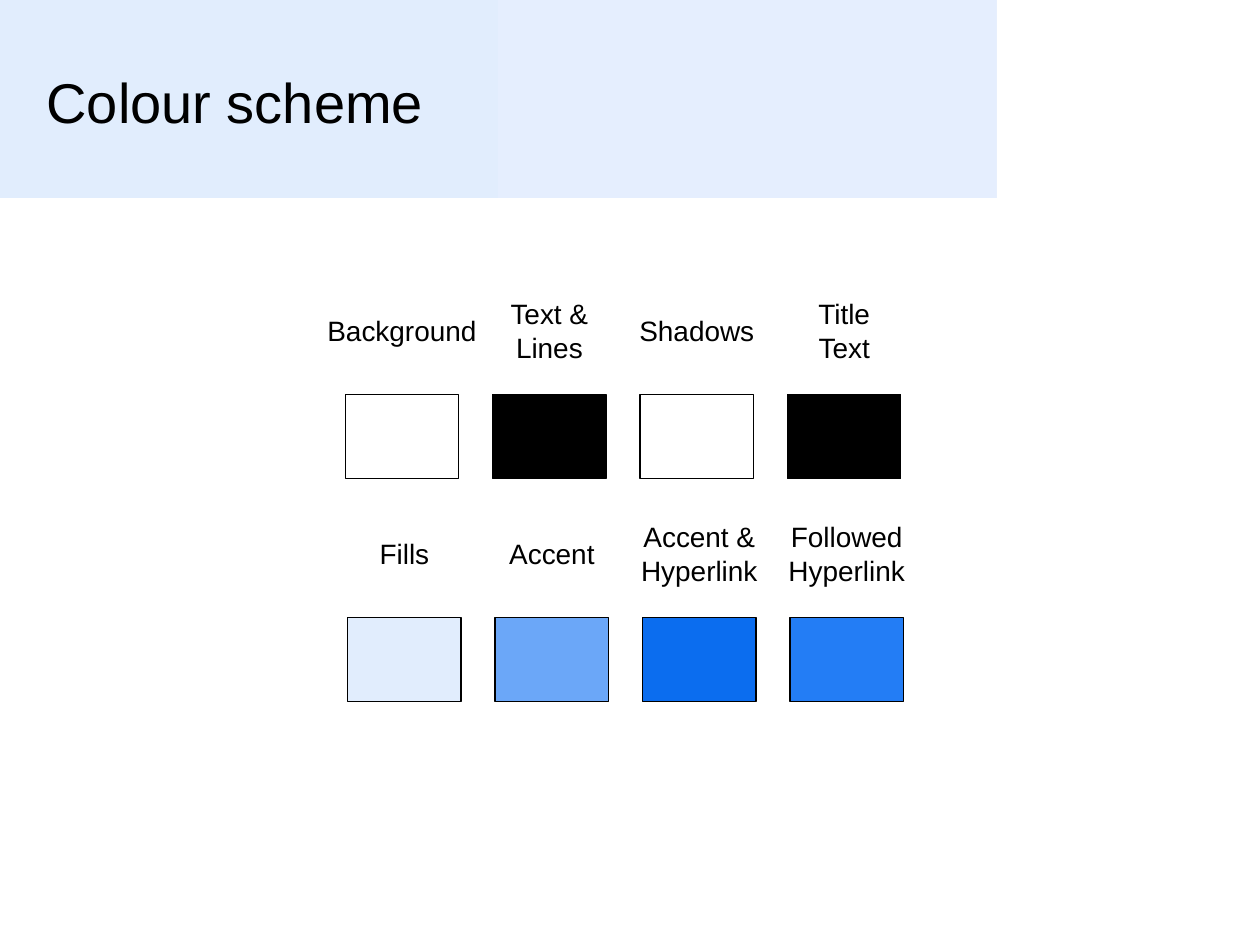
from dataclasses import dataclass

from pptx import Presentation
from pptx.dml.color import RGBColor
from pptx.enum.shapes import MSO_SHAPE
from pptx.enum.text import MSO_ANCHOR, PP_ALIGN
from pptx.util import Inches, Pt


@dataclass(frozen=True)
class Theme:
    font: str = "Arial"
    text: str = "000000"
    background: str = "FFFFFF"
    fills: str = "E1EDFD"
    band_end: str = "E5EEFE"
    accent: str = "6BA7F8"
    strong_accent: str = "0B6DEF"
    followed: str = "237DF5"
    title_size: int = 32
    label_size: int = 16
    line_width: float = 0.75


class SchemeSlide:
    COLUMN_PITCH = 1.17
    ROW_PITCH = 1.77
    ROW_SHIFT = 0.02
    FIRST_CENTRE = 3.19
    LABEL_TOP = 2.3
    LABEL_SIZE = (1.39, 0.64)
    SWATCH_TOP = 3.13
    SWATCH_SIZE = (0.9, 0.67)

    def __init__(self, presentation, theme):
        self.theme = theme
        self.slide = presentation.slides.add_slide(presentation.slide_layouts[6])

    def cell(self, column, row, top, size):
        width, height = size
        centre = self.FIRST_CENTRE + column * self.COLUMN_PITCH + row * self.ROW_SHIFT
        return centre - width / 2, top + row * self.ROW_PITCH, width, height

    def rectangle(self, box):
        shape = self.slide.shapes.add_shape(MSO_SHAPE.RECTANGLE, *map(Inches, box))
        shape.shadow.inherit = False
        return shape

    def text(self, box, paragraphs, size, alignment, wrap):
        shape = self.slide.shapes.add_textbox(*map(Inches, box))
        frame = shape.text_frame
        frame.word_wrap = wrap
        frame.vertical_anchor = MSO_ANCHOR.MIDDLE
        frame.text = paragraphs
        for paragraph in frame.paragraphs:
            paragraph.alignment = alignment
            paragraph.font.name = self.theme.font
            paragraph.font.size = Pt(size)
            paragraph.font.color.rgb = RGBColor.from_string(self.theme.text)

    def band(self, box):
        shape = self.rectangle(box)
        shape.line.fill.background()
        shape.fill.gradient()
        shape.fill.gradient_angle = 0
        for stop, color in zip(
            shape.fill.gradient_stops, (self.theme.fills, self.theme.band_end)
        ):
            stop.color.rgb = RGBColor.from_string(color)

    def title(self, box, text):
        self.text(box, text, self.theme.title_size, PP_ALIGN.LEFT, True)

    def label(self, column, row, text):
        box = self.cell(column, row, self.LABEL_TOP, self.LABEL_SIZE)
        self.text(box, text, self.theme.label_size, PP_ALIGN.CENTER, False)

    def swatch(self, column, row, color):
        shape = self.rectangle(self.cell(column, row, self.SWATCH_TOP, self.SWATCH_SIZE))
        shape.fill.solid()
        shape.fill.fore_color.rgb = RGBColor.from_string(color)
        shape.line.color.rgb = RGBColor.from_string(self.theme.text)
        shape.line.width = Pt(self.theme.line_width)


def main():
    presentation = Presentation()
    presentation.slide_width = Inches(10)
    presentation.slide_height = Inches(7.5)
    theme = Theme()
    scheme = SchemeSlide(presentation, theme)
    scheme.band((0, 0, 7.91, 1.57))
    scheme.title((0.27, 0.3, 7.48, 1.01), "Colour scheme")

    entries = (
        (
            ("Background", theme.background),
            ("Text &\nLines", theme.text),
            ("Shadows", theme.background),
            ("Title\vText", theme.text),
        ),
        (
            ("Fills", theme.fills),
            ("Accent", theme.accent),
            ("Accent &\nHyperlink", theme.strong_accent),
            ("Followed\nHyperlink", theme.followed),
        ),
    )
    for row, row_entries in enumerate(entries):
        for column, (name, color) in enumerate(row_entries):
            scheme.swatch(column, row, color)
            scheme.label(column, row, name)

    presentation.save("out.pptx")


if __name__ == "__main__":
    main()
